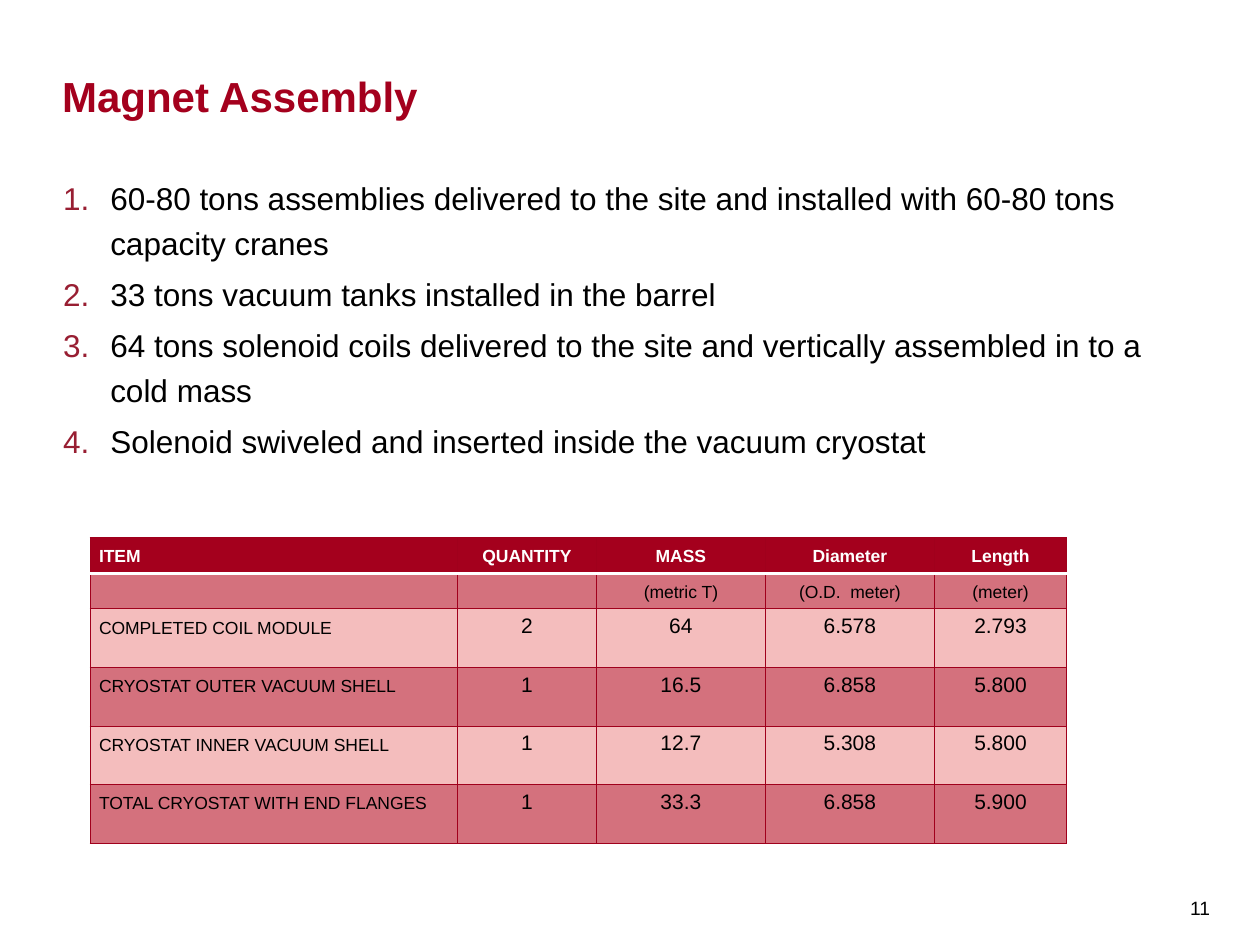
from dataclasses import dataclass

from lxml.etree import SubElement
from pptx import Presentation
from pptx.dml.color import RGBColor
from pptx.enum.text import MSO_ANCHOR, MSO_AUTO_SIZE, PP_ALIGN
from pptx.oxml.ns import qn
from pptx.util import Pt


@dataclass(frozen=True)
class Theme:
    font: str = "Arial"
    red: str = "A4001D"
    number: str = "981E32"
    border: str = "A0001C"
    dark_band: str = "D4717D"
    light_band: str = "F4BDBD"
    black: str = "000000"
    white: str = "FFFFFF"
    title_size: float = 24
    body_size: float = 18
    value_size: float = 12
    label_size: float = 10
    page_size: float = 11


THEME = Theme()

STEPS = [
    "60-80 tons assemblies delivered to the site and installed with 60-80 tons capacity cranes",
    "33 tons vacuum tanks installed in the barrel",
    "64 tons solenoid coils delivered to the site and vertically assembled in to a cold mass",
    "Solenoid swiveled and inserted inside the vacuum cryostat",
]
MAGNET_ROWS = [
    ["ITEM", "QUANTITY", "MASS", "Diameter", "Length"],
    ["", "", "(metric T)", "(O.D.  meter)", "(meter)"],
    ["COMPLETED COIL MODULE", "2", "64", "6.578", "2.793"],
    ["CRYOSTAT OUTER VACUUM SHELL", "1", "16.5", "6.858", "5.800"],
    ["CRYOSTAT INNER VACUUM SHELL", "1", "12.7", "5.308", "5.800"],
    ["TOTAL CRYOSTAT WITH END FLANGES", "1", "33.3", "6.858", "5.900"],
]
COLUMN_WIDTHS = [209.8, 79.4, 96.6, 96.6, 75.6]
HEADING_ROWS = 2
HEADING_HEIGHT = 20.4
ITEM_HEIGHT = 33.5


def style_font(font, size, color, bold=False):
    font.name = THEME.font
    font.size = Pt(size)
    font.bold = bold
    font.color.rgb = RGBColor.from_string(color)


def place(shape, box):
    shape.left, shape.top, shape.width, shape.height = (Pt(length) for length in box)


def set_frame(text_frame, anchor, margins=(0, 0, 0, 0)):
    text_frame.word_wrap = True
    text_frame.auto_size = MSO_AUTO_SIZE.NONE
    text_frame.vertical_anchor = anchor
    (text_frame.margin_left, text_frame.margin_top,
     text_frame.margin_right, text_frame.margin_bottom) = map(Pt, margins)


def add_title(slide, box, text):
    title = slide.shapes.title
    place(title, box)
    set_frame(title.text_frame, MSO_ANCHOR.BOTTOM)
    title.text_frame.text = text
    paragraph = title.text_frame.paragraphs[0]
    paragraph.alignment = PP_ALIGN.LEFT
    style_font(paragraph.runs[0].font, THEME.title_size, THEME.red, bold=True)


def number_paragraph(paragraph, indent):
    """Give the paragraph an automatic number in a hanging indent."""
    properties = paragraph._p.get_or_add_pPr()
    properties.set("marL", str(Pt(indent)))
    properties.set("indent", str(-Pt(indent)))
    color = SubElement(properties, qn("a:buClr"))
    SubElement(color, qn("a:srgbClr"), val=THEME.number)
    SubElement(properties, qn("a:buFont"), typeface=THEME.font)
    SubElement(properties, qn("a:buAutoNum"), type="arabicPeriod")


def add_steps(slide, box, steps):
    body = slide.placeholders[1]
    place(body, box)
    set_frame(body.text_frame, MSO_ANCHOR.TOP)
    body.text_frame.text = "\n".join(steps)
    for paragraph in body.text_frame.paragraphs:
        number_paragraph(paragraph, 27)
        paragraph.line_spacing = 1.2
        paragraph.space_before = Pt(0)
        paragraph.space_after = Pt(3)
        style_font(paragraph.runs[0].font, THEME.body_size, THEME.black)


def set_borders(cell, **borders):
    """Draw cell borders; each side is given as (colour, width)."""
    properties = cell._tc.get_or_add_tcPr()
    for index, side in enumerate("LRTB"):
        color, width = borders.get(side, (THEME.border, 0.75))
        line = properties.makeelement(qn(f"a:ln{side}"), {"w": str(Pt(width))})
        fill = SubElement(line, qn("a:solidFill"))
        SubElement(fill, qn("a:srgbClr"), val=color)
        properties.insert(index, line)


def fill_cell(cell, text, row, column):
    is_header = row == 0
    is_value = row >= HEADING_ROWS and column > 0
    band = THEME.dark_band if row % 2 else THEME.light_band
    cell.fill.solid()
    cell.fill.fore_color.rgb = RGBColor.from_string(THEME.red if is_header else band)
    cell.margin_left = cell.margin_right = Pt(5)
    cell.margin_top = cell.margin_bottom = Pt(3.6)
    cell.text_frame.text = text
    paragraph = cell.text_frame.paragraphs[0]
    paragraph.alignment = PP_ALIGN.CENTER if column else PP_ALIGN.LEFT
    paragraph.line_spacing = Pt(13)
    size = THEME.value_size if is_value else THEME.label_size
    color = THEME.white if is_header else THEME.black
    for font in [paragraph.font] + [run.font for run in paragraph.runs]:
        style_font(font, size, color, is_header)
    if not text:
        SubElement(paragraph._p, qn("a:endParaRPr"), sz=str(size * 100))
    rule = (THEME.white, 2)
    set_borders(cell, **({"B": rule} if is_header else {"T": rule} if row == 1 else {}))


def add_magnet_table(slide, left, top, rows):
    heights = [HEADING_HEIGHT if row < HEADING_ROWS else ITEM_HEIGHT for row in range(len(rows))]
    table = slide.shapes.add_table(
        len(rows), len(COLUMN_WIDTHS), Pt(left), Pt(top),
        Pt(sum(COLUMN_WIDTHS)), Pt(sum(heights))).table
    for column, width in zip(table.columns, COLUMN_WIDTHS):
        column.width = Pt(width)
    for row, (height, texts) in enumerate(zip(heights, rows)):
        table.rows[row].height = Pt(height)
        for column, text in enumerate(texts):
            fill_cell(table.cell(row, column), text, row, column)


def add_page_number(slide, box, text):
    text_frame = slide.shapes.add_textbox(*map(Pt, box)).text_frame
    set_frame(text_frame, MSO_ANCHOR.MIDDLE, (5.5, 4, 5.5, 3.6))
    text_frame.word_wrap = False
    text_frame.text = text
    style_font(text_frame.paragraphs[0].runs[0].font, THEME.page_size, THEME.black)


def main():
    presentation = Presentation()
    presentation.slide_width, presentation.slide_height = Pt(720), Pt(540)
    slide = presentation.slides.add_slide(presentation.slide_layouts[1])
    add_page_number(slide, (674.6, 497.5, 25.2, 42.5), "11")
    add_title(slide, (35.5, 10, 638, 59), "Magnet Assembly")
    add_steps(slide, (36, 98, 638.6, 399), STEPS)
    add_magnet_table(slide, 51.6, 307.2, MAGNET_ROWS)
    presentation.save("out.pptx")


if __name__ == "__main__":
    main()
